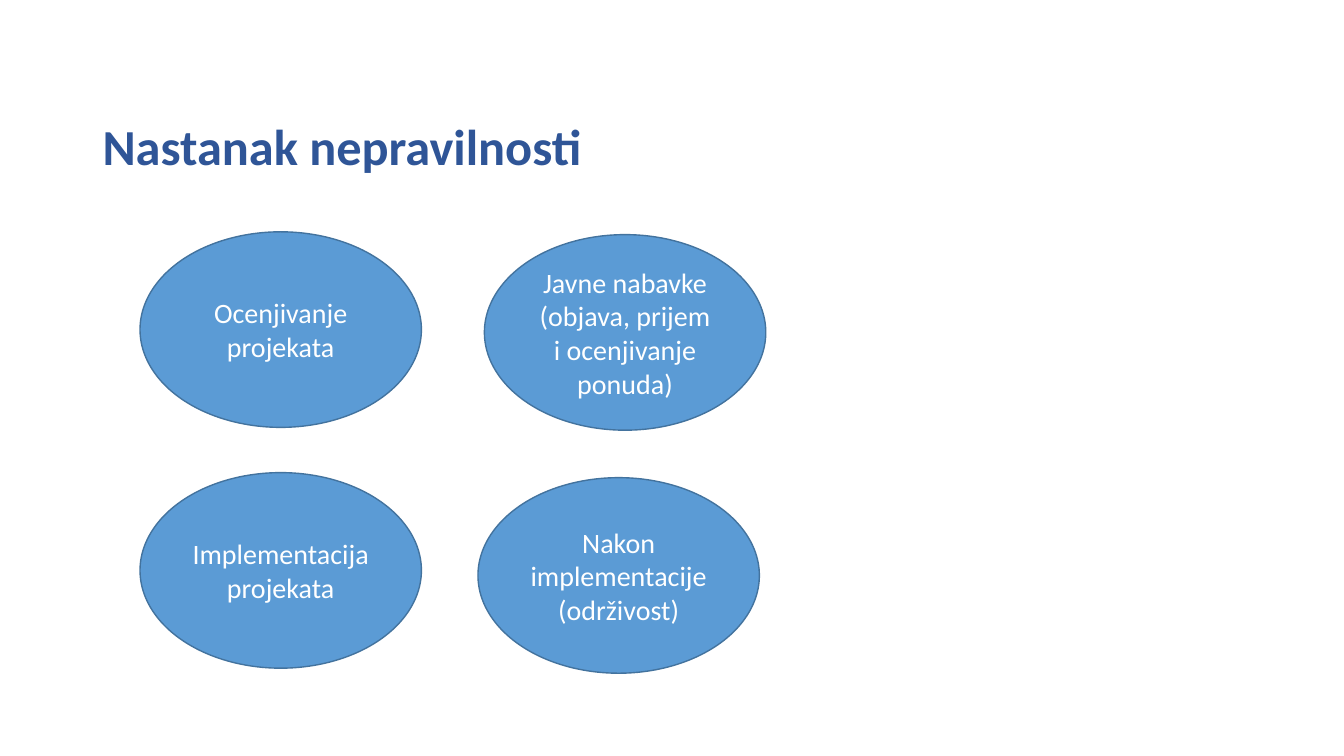
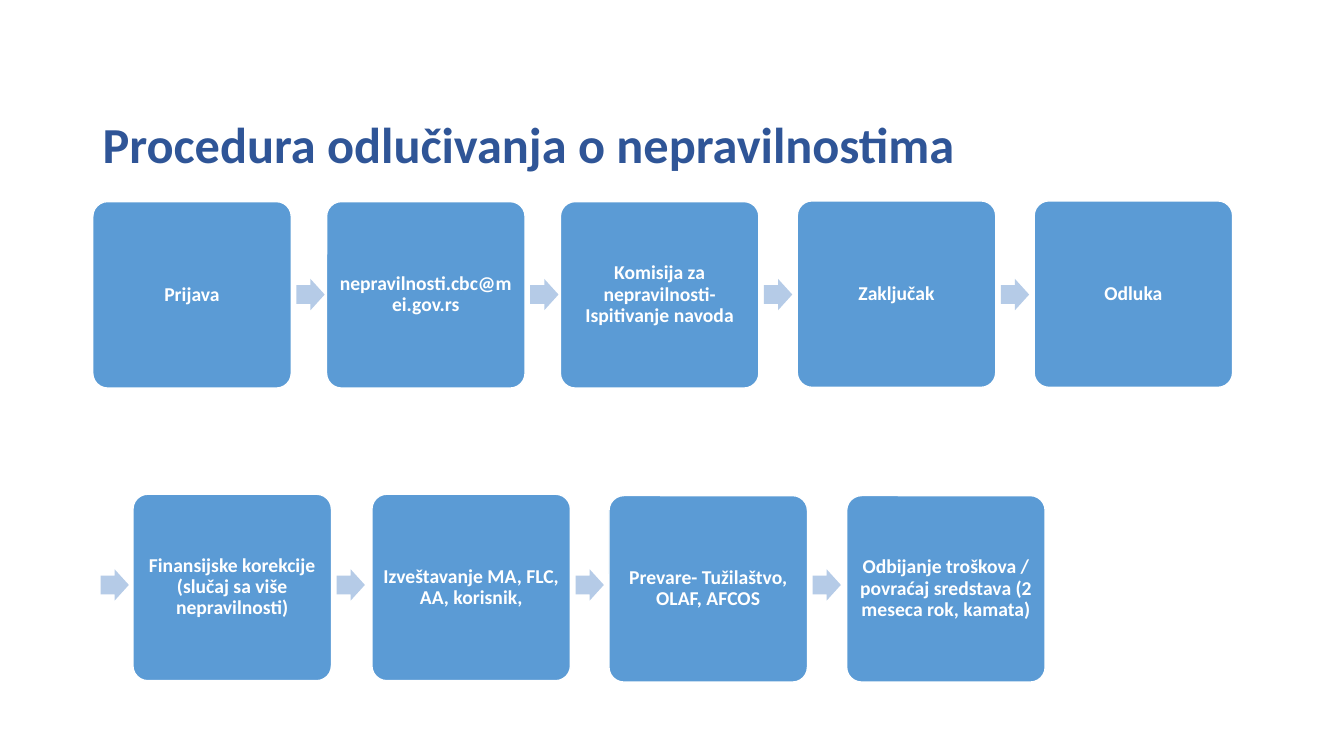
from dataclasses import dataclass

from pptx import Presentation
from pptx.dml.color import RGBColor
from pptx.enum.shapes import MSO_SHAPE
from pptx.enum.text import MSO_ANCHOR, PP_ALIGN
from pptx.util import Pt


@dataclass(frozen=True)
class Theme:
    """Colours, typeface and type sizes of the deck."""
    face: str = "Calibri"
    title: str = "2F5597"
    fill: str = "5B9BD5"
    edge: str = "43739E"
    arrow: str = "B5CBE7"
    white: str = "FFFFFF"
    head: int = 36
    body: int = 20
    step: int = 14


THEME = Theme()


def apply(target, values):
    """Set each named value on the target."""
    for name, value in values.items():
        setattr(target, name, value)


def write(shape, text, size, color, bold, align, inset, space=1.0):
    """Put one formatted paragraph in a shape."""
    frame = shape.text_frame
    side, top = map(Pt, inset)
    apply(frame, {"word_wrap": True, "vertical_anchor": MSO_ANCHOR.MIDDLE,
                  "margin_left": side, "margin_right": side,
                  "margin_top": top, "margin_bottom": top})
    para = frame.paragraphs[0]
    apply(para, {"text": text, "alignment": align, "line_spacing": space})
    font = para.runs[0].font
    apply(font, {"name": THEME.face, "size": Pt(size), "bold": bold})
    font.color.rgb = RGBColor.from_string(color)


def draw(slide, kind, box, fill, edge=None, adjust=()):
    """Add a flat preset shape."""
    shape = slide.shapes.add_shape(kind, *map(Pt, box))
    shape.shadow.inherit = False
    for index, value in enumerate(adjust):
        shape.adjustments[index] = value
    shape.fill.solid()
    shape.fill.fore_color.rgb = RGBColor.from_string(fill)
    if edge:
        shape.line.color.rgb = RGBColor.from_string(edge)
        shape.line.width = Pt(1)
    else:
        shape.line.fill.background()
    return shape


def title(slide, box, text):
    """Place the slide title."""
    shape = slide.shapes.add_textbox(*map(Pt, box))
    write(shape, text, THEME.head, THEME.title, True, PP_ALIGN.LEFT, (7.2, 3.6))


def ovals(slide, box, items):
    """Place the ovals by their offsets in the box."""
    left, top, wide, high = box
    for right, down, text in items:
        place = (left + right, top + down, wide, high)
        shape = draw(slide, MSO_SHAPE.OVAL, place, THEME.fill, THEME.edge)
        write(shape, text, THEME.body, THEME.white, False,
              PP_ALIGN.CENTER, (7.2, 3.6))


def flow(slide, box, mid, items, lead=False):
    """Place a row of steps, with an arrow before each but a starting one."""
    left, top, wide, high = box
    size, tall, gap = 20.2, 22.3, 3.6
    end = left - gap - 2 * size - 0.8
    end = left - size - 2 * gap - gap / 2 + 2.4 if lead else end
    for index, (right, down, text) in enumerate(items):
        place = (left + right, top + down, wide, high)
        shape = draw(slide, MSO_SHAPE.ROUNDED_RECTANGLE, place,
                     THEME.fill, THEME.white, (0.08,))
        write(shape, text, THEME.step, THEME.white, True,
              PP_ALIGN.CENTER, (5, 5), 0.9)
        if index or lead:
            spot = (end + gap, top + mid - tall / 2, size, tall)
            draw(slide, MSO_SHAPE.RIGHT_ARROW, spot, THEME.arrow,
                 adjust=(0.6, 0.5))
        end = left + right + wide


def causes(slide):
    """Build the slide on where irregularities arise."""
    title(slide, (66.2, 79, 828, 50), "Nastanak nepravilnosti")
    ovals(slide, (100, 165.6, 201, 139.7), (
        (0, 0, "Ocenjivanje projekata"),
        (246, 2, "Javne nabavke (objava, prijem i ocenjivanje ponuda)"),
        (0, 172, "Implementacija projekata"),
        (241.4, 175.6, "Nakon implementacije (održivost)")))


def process(slide):
    """Build the slide on the decision procedure."""
    title(slide, (66.2, 77.6, 828, 50),
          "Procedura odlučivanja o nepravilnostima")
    flow(slide, (66.3, 144, 141.8, 133.2), 66.4, (
        (0, 0, "Prijava"),
        (167, 0, "nepravilnosti.cbc@mei.gov.rs"),
        (334, 0, "Komisija za nepravilnosti- Ispitivanje navoda"),
        (503.2, -0.5, "Zaključak"),
        (672.4, -0.5, "Odluka")))
    flow(slide, (95, 353, 141.8, 133.2), 64.8, (
        (0, 0, "Finansijske korekcije (slučaj sa više nepravilnosti)"),
        (170.7, 0, "Izveštavanje MA, FLC, AA, korisnik,"),
        (340, 1, "Prevare- Tužilaštvo, OLAF, AFCOS"),
        (509.8, 1, "Odbijanje troškova / povraćaj sredstava "
                   "(2 meseca rok, kamata)")), True)


def main():
    """Build and save the deck."""
    deck = Presentation()
    apply(deck, {"slide_width": Pt(960), "slide_height": Pt(540)})
    for build in (causes, process):
        build(deck.slides.add_slide(deck.slide_layouts[6]))
    deck.save("out.pptx")


if __name__ == "__main__":
    main()
